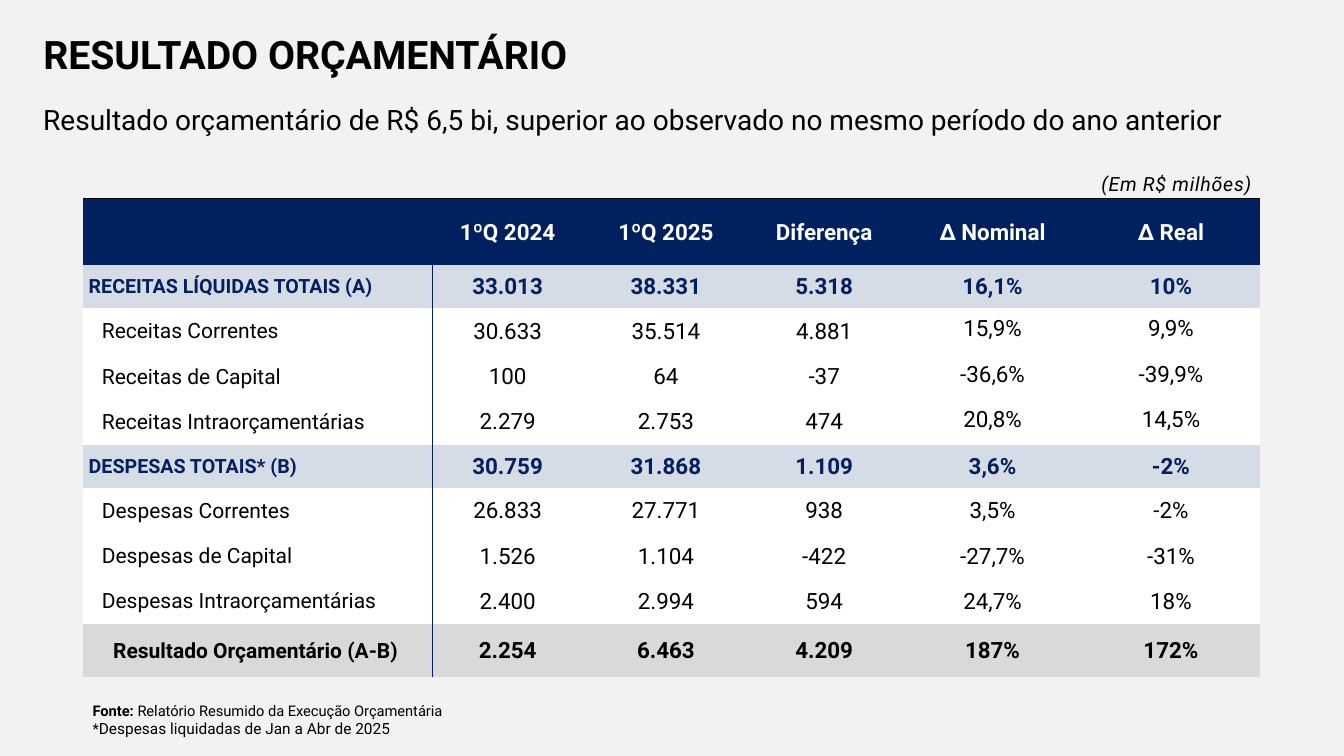
from collections import namedtuple

from lxml.etree import SubElement
from pptx import Presentation
from pptx.dml.color import RGBColor
from pptx.enum.shapes import MSO_CONNECTOR as Connector
from pptx.enum.text import MSO_ANCHOR as Anchor, MSO_AUTO_SIZE as AutoSize, PP_ALIGN as Align
from pptx.oxml.ns import qn
from pptx.util import Inches, Pt

Box = namedtuple("Box", "left top width height")
RowStyle = namedtuple("RowStyle", "height fill color bold label_size label_inset label_align")

GRID_COLUMNS, GRID_ROWS = 1333, 750
SLIDE_WIDTH, SLIDE_HEIGHT = Inches(13.33), Inches(7.5)
FONT = "Roboto"
NAVY, BLACK, WHITE = "002060", "000000", "FFFFFF"
NO_STYLE = "{2D5ABB26-0587-4C30-8999-92F81FD0307C}"

COLUMN_WIDTHS = [343, 157, 157, 157, 177, 177]
HEADER = RowStyle(66, NAVY, WHITE, True, 16, 1, Align.CENTER)
TOTAL = RowStyle(43, "D6DCE5", NAVY, True, 14, 6, Align.LEFT)
ITEM = RowStyle(45, WHITE, BLACK, False, 15, 19, Align.LEFT)
RESULT = RowStyle(53, "D9D9D9", BLACK, True, 15, 1, Align.CENTER)
ROWS = [
    (HEADER, ["", "1ºQ 2024", "1ºQ 2025", "Diferença", "∆ Nominal", "∆ Real"]),
    (TOTAL, ["RECEITAS LÍQUIDAS TOTAIS (A)", "33.013", "38.331", "5.318", "16,1%", "10%"]),
    (ITEM, ["Receitas Correntes", "30.633", "35.514", "4.881", "15,9%", "9,9%"]),
    (ITEM, ["Receitas de Capital", "100", "64", "-37", "-36,6%", "-39,9%"]),
    (ITEM, ["Receitas Intraorçamentárias", "2.279", "2.753", "474", "20,8%", "14,5%"]),
    (TOTAL, ["DESPESAS TOTAIS* (B)", "30.759", "31.868", "1.109", "3,6%", "-2%"]),
    (ITEM, ["Despesas Correntes", "26.833", "27.771", "938", "3,5%", "-2%"]),
    (ITEM, ["Despesas de Capital", "1.526", "1.104", "-422", "-27,7%", "-31%"]),
    (ITEM, ["Despesas Intraorçamentárias", "2.400", "2.994", "594", "24,7%", "18%"]),
    (RESULT, ["Resultado Orçamentário (A-B)", "2.254", "6.463", "4.209", "187%", "172%"]),
]
RAISED_ROWS, RAISED_COLUMNS = range(2, 5), range(4, 6)


def across(columns):
    return round(SLIDE_WIDTH * columns / GRID_COLUMNS)


def down(rows):
    return round(SLIDE_HEIGHT * rows / GRID_ROWS)


def place(box):
    return across(box.left), down(box.top), across(box.width), down(box.height)


def color(hex_string):
    return RGBColor.from_string(hex_string)


def add_span(para, text, size, hex_string=BLACK, bold=False, italic=False):
    span = para.add_run()
    span.text = text
    font = span.font
    font.name, font.size, font.bold, font.italic = FONT, Pt(size), bold, italic
    font.color.rgb = color(hex_string)
    return span


def add_text_box(page, box, anchor=Anchor.TOP):
    frame = page.shapes.add_textbox(*place(box)).text_frame
    frame.word_wrap = True
    frame.vertical_anchor = anchor
    return frame


def add_title(page, box):
    title = page.shapes.title
    title.left, title.top, title.width, title.height = place(box)
    frame = title.text_frame
    frame.word_wrap = True
    frame.auto_size = AutoSize.NONE
    frame.vertical_anchor = Anchor.MIDDLE
    para = frame.paragraphs[0]
    para.alignment = Align.LEFT
    para.line_spacing = 0.9
    add_span(para, "RESULTADO ORÇAMENTÁRIO", 28, bold=True)


def add_subtitle(page, box):
    para = add_text_box(page, box, Anchor.MIDDLE).paragraphs[0]
    para.line_spacing = 1.2
    add_span(para, "Resultado orçamentário de R$ 6,5 bi, superior ao observado "
                   "no mesmo período do ano anterior", 20)


def add_unit_note(page, box):
    para = add_text_box(page, box).paragraphs[0]
    para.alignment = Align.RIGHT
    para.line_spacing = 1.2
    span = add_span(para, "(Em R$ milhões)", 14, italic=True)
    span.font._element.set("spc", "50")


def add_source_note(page, box):
    frame = add_text_box(page, box)
    source = frame.paragraphs[0]
    add_span(source, "Fonte: ", 10.5, bold=True)
    add_span(source, "Relatório Resumido da Execução Orçamentária", 10.5)
    remark = frame.add_paragraph()
    add_span(remark, "*", 10.5)
    add_span(remark, "Despesas liquidadas de Jan a Abr de 2025", 11)


def add_top_border(cell):
    properties = cell._tc.get_or_add_tcPr()
    border = properties.makeelement(qn("a:lnT"), {"w": str(Pt(0.5))})
    properties.insert(0, border)
    fill = SubElement(border, qn("a:solidFill"))
    SubElement(fill, qn("a:srgbClr"), val=BLACK)


def fill_cell(cell, text, style, is_label, bottom_inset):
    cell.fill.solid()
    cell.fill.fore_color.rgb = color(style.fill)
    cell.vertical_anchor = Anchor.MIDDLE
    cell.margin_left = across(style.label_inset if is_label else 1)
    cell.margin_right, cell.margin_top = across(1), down(1)
    cell.margin_bottom = down(bottom_inset)
    para = cell.text_frame.paragraphs[0]
    para.alignment = style.label_align if is_label else Align.CENTER
    if text:
        size = style.label_size if is_label else 16
        add_span(para, text, size, style.color, style.bold)


def add_budget_table(page, box):
    frame = page.shapes.add_table(len(ROWS), len(COLUMN_WIDTHS), *place(box))
    table = frame.table
    table.horz_banding = False
    table._tbl.tblPr.find(qn("a:tableStyleId")).text = NO_STYLE
    for column, width in zip(table.columns, COLUMN_WIDTHS):
        column.width = across(width)
    for row_index, (style, texts) in enumerate(ROWS):
        table.rows[row_index].height = down(style.height)
        for column_index, text in enumerate(texts):
            cell = table.cell(row_index, column_index)
            raised = row_index in RAISED_ROWS and column_index in RAISED_COLUMNS
            fill_cell(cell, text, style, column_index == 0, 5 if raised else 0)
            if style is HEADER:
                add_top_border(cell)
    add_label_divider(page, box)


def add_label_divider(page, box):
    x = across(box.left + COLUMN_WIDTHS[0] + 4)
    top, bottom = down(box.top + HEADER.height - 22), down(box.top + box.height)
    top = down(box.top + HEADER.height)
    divider = page.shapes.add_connector(Connector.STRAIGHT, x, top, x, bottom)
    divider.line.color.rgb = color(NAVY)
    divider.line.width = Pt(0.75)
    SubElement(divider._element.spPr, qn("a:effectLst"))


def build_budget_page(deck):
    page = deck.slides.add_slide(deck.slide_layouts[5])
    page.background.fill.solid()
    page.background.fill.fore_color.rgb = color("F2F2F2")
    add_title(page, Box(33, 17, 1055, 79))
    add_subtitle(page, Box(33, 89, 1268, 53))
    add_unit_note(page, Box(1042, 161, 209, 42))
    add_source_note(page, Box(82, 691, 474, 59))
    table_height = sum(style.height for style, _ in ROWS)
    add_budget_table(page, Box(82, 197, sum(COLUMN_WIDTHS), table_height))


def main():
    deck = Presentation()
    deck.slide_width, deck.slide_height = SLIDE_WIDTH, SLIDE_HEIGHT
    build_budget_page(deck)
    deck.save("out.pptx")


if __name__ == "__main__":
    main()
